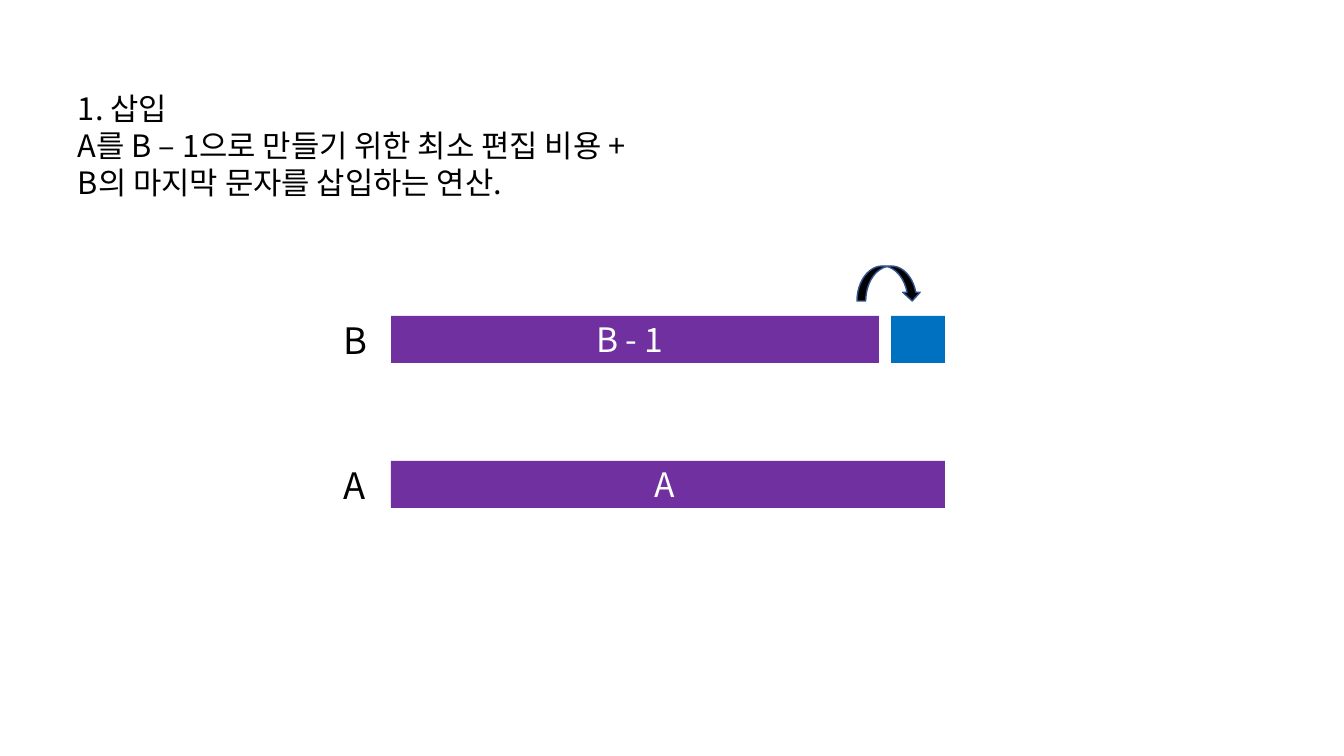
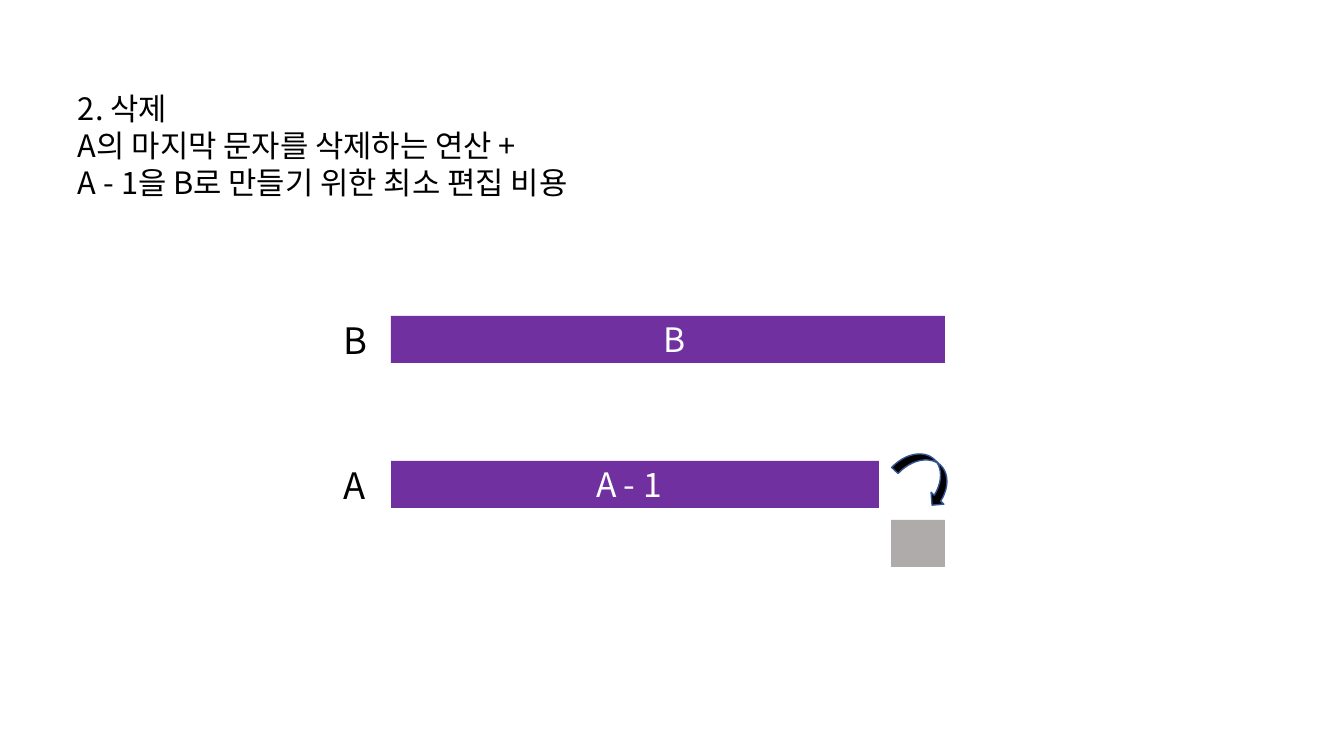
from dataclasses import dataclass

from lxml.etree import SubElement
from pptx import Presentation
from pptx.dml.color import RGBColor as Color
from pptx.enum.shapes import MSO_SHAPE as Shape
from pptx.enum.text import MSO_ANCHOR as Anchor, PP_ALIGN as Align
from pptx.oxml.ns import qn
from pptx.util import Emu, Pt


@dataclass(frozen=True)
class Theme:
    font: str = "Noto Sans CJK KR"
    title_size: int = 22
    bar_size: int = 24
    label_size: int = 26
    ink: str = "000000"
    light: str = "FFFFFF"
    bar: str = "7030A0"
    inserted: str = "0070C0"
    deleted: str = "AFABAB"
    arrow_edge: str = "325491"


THEME = Theme()
EMU_PER_PX = 914400 / 100.8
PAGE_SIZE = (1344, 756)
TITLE_BOX = (68, 85, 758, 122)
INSET_X, INSET_Y = 10, 5
BAR_LEFT, BAR_HEIGHT, SHORT_WIDTH = 391, 47, 488
BLOCK_WIDTH, GAP = 54, 12
BLOCK_LEFT = BAR_LEFT + SHORT_WIDTH + GAP
FULL_WIDTH = SHORT_WIDTH + GAP + BLOCK_WIDTH
ROW_TOP, ROW_PITCH = 316, 145
LABEL_LEFT, LABEL_WIDTH, LABEL_HEIGHT = 334, 45, 54
ARROW_SIZE = (64, 35)
ROW_NAMES = ("B", "A")

SLIDES = [
    {
        "title": ["1. 삽입", "A를 B – 1으로 만들기 위한 최소 편집 비용 +", "B의 마지막 문자를 삽입하는 연산."],
        "bars": [("B - 1", SHORT_WIDTH, 205), ("A", FULL_WIDTH, 264)],
        "block": (ROW_TOP, THEME.inserted),
        "arrow": (857, 266, 0),
    },
    {
        "title": ["2. 삭제", "A의 마지막 문자를 삭제하는 연산 +", "A - 1을 B로 만들기 위한 최소 편집 비용"],
        "bars": [("B", FULL_WIDTH, 273), ("A - 1", SHORT_WIDTH, 205)],
        "block": (ROW_TOP + ROW_PITCH + BAR_HEIGHT + GAP, THEME.deleted),
        "arrow": (895, 459, 43),
    },
]


def px(*lengths):
    """Turn pixel lengths into EMU."""
    return [Emu(round(length * EMU_PER_PX)) for length in lengths]


def write(shape, lines, size, color, anchor=Anchor.TOP, indent=INSET_X):
    """Fill a shape with left-aligned paragraphs."""
    frame = shape.text_frame
    frame.word_wrap = True
    frame.vertical_anchor = anchor
    frame.margin_left, frame.margin_right = px(indent, INSET_X)
    frame.margin_top, frame.margin_bottom = px(INSET_Y, INSET_Y)
    frame.text = "\n".join(lines)
    for para in frame.paragraphs:
        para.alignment = Align.LEFT
        para.font.name = THEME.font
        para.font.size = Pt(size)
        para.font.color.rgb = Color.from_string(color)
        east_asian = SubElement(para.font._rPr, qn("a:ea"))
        east_asian.set("typeface", THEME.font)


def add_solid(page, preset, box, fill, edge=None):
    """Add a flat filled shape, outlined only when an edge colour is given."""
    shape = page.shapes.add_shape(preset, *px(*box))
    shape.shadow.inherit = False
    shape.fill.solid()
    shape.fill.fore_color.rgb = Color.from_string(fill)
    if edge:
        shape.line.color.rgb = Color.from_string(edge)
        shape.line.width = Pt(1)
    else:
        shape.line.fill.background()
    return shape


def add_title(page, lines):
    """Place the operation name and its cost in the title placeholder."""
    title = page.shapes.title
    title.left, title.top, title.width, title.height = px(*TITLE_BOX)
    write(title, lines, THEME.title_size, THEME.ink)


def add_row(page, index, name, bar):
    """Draw one named string bar."""
    text, width, indent = bar
    top = ROW_TOP + index * ROW_PITCH
    label_top = top + (BAR_HEIGHT - LABEL_HEIGHT) / 2
    label = page.shapes.add_textbox(*px(LABEL_LEFT, label_top, LABEL_WIDTH, LABEL_HEIGHT))
    write(label, [name], THEME.label_size, THEME.ink, Anchor.MIDDLE)
    strip = add_solid(page, Shape.RECTANGLE, (BAR_LEFT, top, width, BAR_HEIGHT), THEME.bar)
    write(strip, [text], THEME.bar_size, THEME.light, Anchor.MIDDLE, indent)


def build_page(deck, content):
    """Build one edit-operation slide."""
    page = deck.slides.add_slide(deck.slide_layouts[5])
    add_title(page, content["title"])
    for index, (name, bar) in enumerate(zip(ROW_NAMES, content["bars"])):
        add_row(page, index, name, bar)
    block_top, block_color = content["block"]
    add_solid(page, Shape.RECTANGLE, (BLOCK_LEFT, block_top, BLOCK_WIDTH, BAR_HEIGHT), block_color)
    left, top, angle = content["arrow"]
    arrow = add_solid(page, Shape.CURVED_DOWN_ARROW, (left, top, *ARROW_SIZE), THEME.ink, THEME.arrow_edge)
    arrow.rotation = angle


def main():
    """Build and save the deck."""
    deck = Presentation()
    deck.slide_width, deck.slide_height = px(*PAGE_SIZE)
    for content in SLIDES:
        build_page(deck, content)
    deck.save("out.pptx")


if __name__ == "__main__":
    main()
